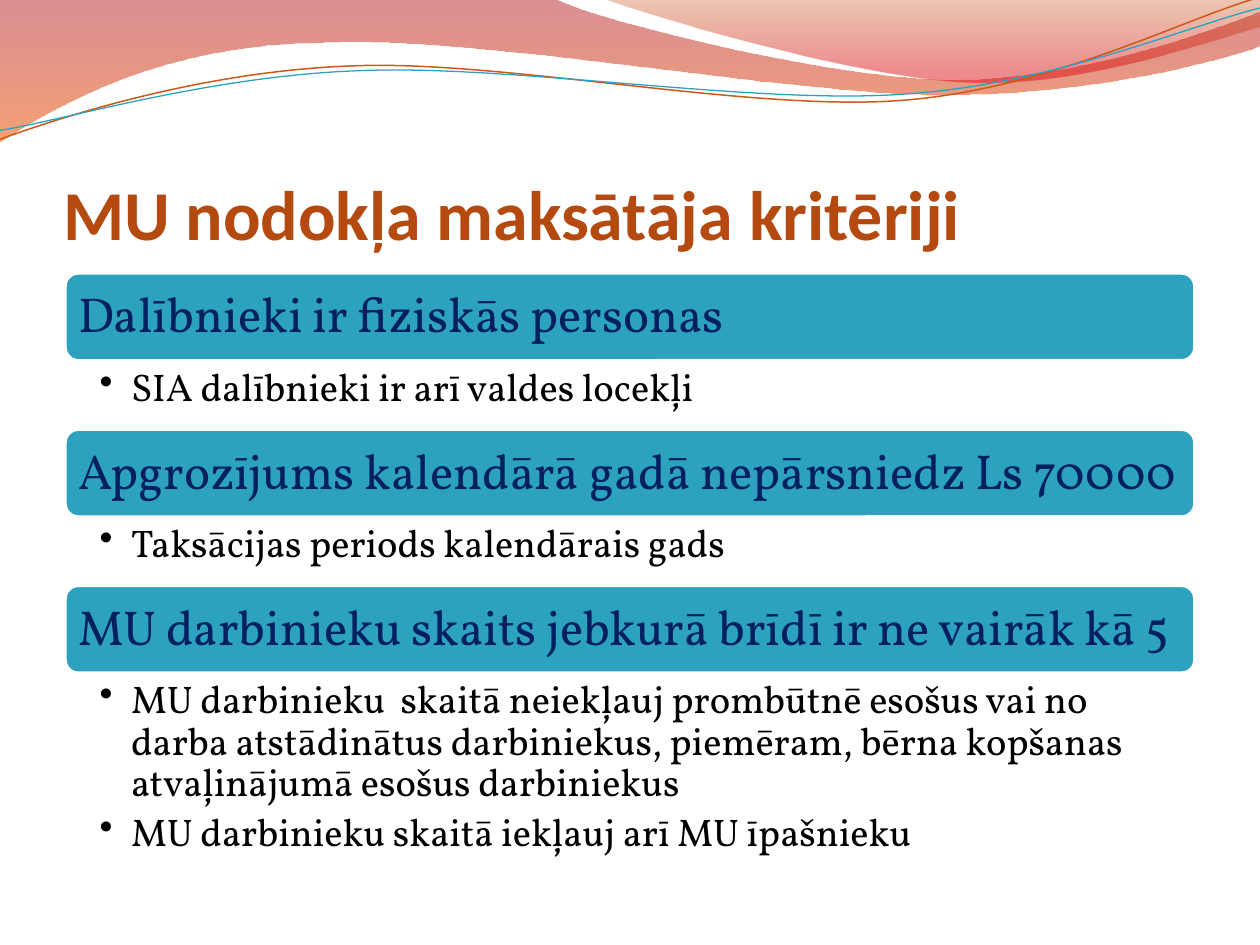
import pptx
import pptx.util
import pptx.dml.color
import pptx.enum.shapes
import pptx.enum.text
import pptx.oxml
import pptx.oxml.ns

PX = 9144
ANCHOR = pptx.enum.text.MSO_ANCHOR
SPACE = pptx.oxml.ns.nsdecls("a")

BANDS = [
    ((0, -1), [(440, -1), (476, 17, 664, 63, 758, 63), (853, 63, 958, 26, 1000, 9),
               (1001, 36), (983, 44, 870, 76, 746, 75), (622, 75, 382, 28, 257, 34),
               (129, 35, 46, 83, -1, 113)],
     [(0, "AF0911", 45), (1, "EE5300", 55)]),
    ((479, -1), [(509, 11, 682, 62, 769, 65), (856, 69, 961, 32, 1000, 21), (1000, 0)],
     [(0, "C24400", 30), (0.8, "DC000B", 45)]),
]
WAVES = [
    ((-2, 87), [(47, 72, 158, 41, 278, 42), (396, 42, 591, 93, 712, 90),
                (832, 87, 940, 36, 1000, 22)], "CF5818", 0.85),
    ((-2, 80), [(46, 75, 164, 45, 283, 46), (403, 46, 596, 88, 716, 85),
                (835, 83, 942, 42, 1002, 30)], "2DA2BF", 0.75),
]
RULES = [
    ("Dalībnieki ir fiziskās personas", ["SIA dalībnieki ir arī valdes locekļi"]),
    ("Apgrozījums kalendārā gadā nepārsniedz Ls 70000",
     ["Taksācijas periods kalendārais gads"]),
    ("MU darbinieku skaits jebkurā brīdī ir ne vairāk kā 5",
     ["MU darbinieku  skaitā neiekļauj prombūtnē esošus vai no darba atstādinātus "
      "darbiniekus, piemēram, bērna kopšanas atvaļinājumā esošus darbiniekus",
      "MU darbinieku skaitā iekļauj arī MU īpašnieku"]),
]


def px(*vals):
    """Turn px lengths into a list of EMU."""
    return [pptx.util.Emu(v * PX) for v in vals]


def color(code):
    """Return the colour of a hex string."""
    return pptx.dml.color.RGBColor.from_string(code)


def bend(shape, parts):
    """Join each run of three line points into one cubic curve."""
    lines = shape._element.spPr.iter(pptx.oxml.ns.qn("a:lnTo"))
    lines = iter(list(lines))
    for part in parts:
        group = [next(lines) for _ in range(len(part) // 2)]
        if len(group) == 3:
            cubic = pptx.oxml.parse_xml(f"<a:cubicBezTo {SPACE}/>")
            group[0].addprevious(cubic)
            for line in group:
                cubic.append(line[0])
                line.getparent().remove(line)


def trace(slide, start, parts, close):
    """Draw a path of lines and cubic curves as a freeform."""
    pen = slide.shapes.build_freeform(*px(*start))
    points = [px(*part[i:i + 2]) for part in parts for i in range(0, len(part), 2)]
    pen.add_line_segments(points, close=close)
    shape = pen.convert_to_shape()
    shape.shadow.inherit = False
    bend(shape, parts)
    return shape


def band(slide, start, parts, stops):
    """Draw a see-through band with a gradient from top to bottom."""
    shape = trace(slide, start, parts, True)
    shape.line.fill.background()
    shape.fill.gradient()
    shape.fill.gradient_angle = 270
    for stop, (place, code, alpha) in zip(shape.fill.gradient_stops, stops):
        stop.position = place
        stop.color.rgb = color(code)
    tints = shape._element.spPr.iter(pptx.oxml.ns.qn("a:srgbClr"))
    for tint, (place, code, alpha) in zip(tints, stops):
        tint.append(pptx.oxml.parse_xml(f'<a:alpha {SPACE} val="{alpha * 1000}"/>'))


def wave(slide, start, parts, code, width):
    """Draw a thin tilted wavy line."""
    shape = trace(slide, start, parts, False)
    shape.rotation = 357.3
    shape.fill.background()
    shape.line.color.rgb = color(code)
    shape.line.width = pptx.util.Pt(width)


def bullet(para):
    """Give a paragraph a hanging bullet."""
    props = para._p.get_or_add_pPr()
    left = px(25)[0]
    props.set("marL", str(left))
    props.set("indent", str(-left))
    props.append(pptx.oxml.parse_xml(f'<a:buChar {SPACE} char="••"/>'))


def write(slide, box, lines, font="Vollkorn", size=22, code="000000", bold=False,
          inset=(0, 0, 0, 0), anchor=ANCHOR.TOP, lead=0.9, after=0, dots=False):
    """Add a text box of formatted paragraphs."""
    frame = slide.shapes.add_textbox(*px(*box)).text_frame
    frame.word_wrap = True
    frame.vertical_anchor = anchor
    (frame.margin_left, frame.margin_top,
     frame.margin_right, frame.margin_bottom) = px(*inset)
    for i, line in enumerate(lines):
        para = frame.add_paragraph() if i else frame.paragraphs[0]
        para.line_spacing = lead
        para.space_after = pptx.util.Pt(after)
        if dots:
            para.level = 1
            bullet(para)
        run = para.add_run()
        run.text = line
        run.font.name = font
        run.font.size = pptx.util.Pt(size)
        run.font.bold = bold
        run.font.color.rgb = color(code)


def header(slide):
    """Draw the bands and waves along the top edge."""
    for item in BANDS:
        band(slide, *item)
    for item in WAVES:
        wave(slide, *item)


def title(slide, *box):
    """Place the heading at the foot of its box."""
    write(slide, box, ["MU nodokļa maksātāja kritēriji"],
          font="Calibri", size=40, code="B54A10", bold=True,
          inset=(0, 5, 0, 0), anchor=ANCHOR.BOTTOM, lead=1)


def rules(slide, x, y, w, h):
    """Stack bars with their notes, the last note taking the rest of the box."""
    tall, note = 73, 51
    for i, (head, notes) in enumerate(RULES):
        top = y + i * (tall + note)
        spot = (x, top, w, tall)
        bar = slide.shapes.add_shape(
            pptx.enum.shapes.MSO_SHAPE.ROUNDED_RECTANGLE, *px(*spot))
        bar.shadow.inherit = False
        bar.fill.solid()
        bar.fill.fore_color.rgb = color("2DA2BF")
        bar.line.color.rgb = color("FFFFFF")
        bar.line.width = pptx.util.Pt(4.33)
        write(slide, spot, [head], size=28, code="002060",
              inset=(12, 12, 12, 12), anchor=ANCHOR.MIDDLE)
        room = y + h - top - tall if i == len(RULES) - 1 else note
        write(slide, (x, top + tall, w, room), notes,
              inset=(29, 4, 22, 4), after=4.4, dots=True)


def main():
    """Build and save the slide."""
    deck = pptx.Presentation()
    deck.slide_width, deck.slide_height = px(1000, 750)
    slide = deck.slides.add_slide(deck.slide_layouts[6])
    header(slide)
    title(slide, 50, 77, 915, 125)
    rules(slide, 50, 215, 900, 473)
    deck.save("out.pptx")


if __name__ == "__main__":
    main()
